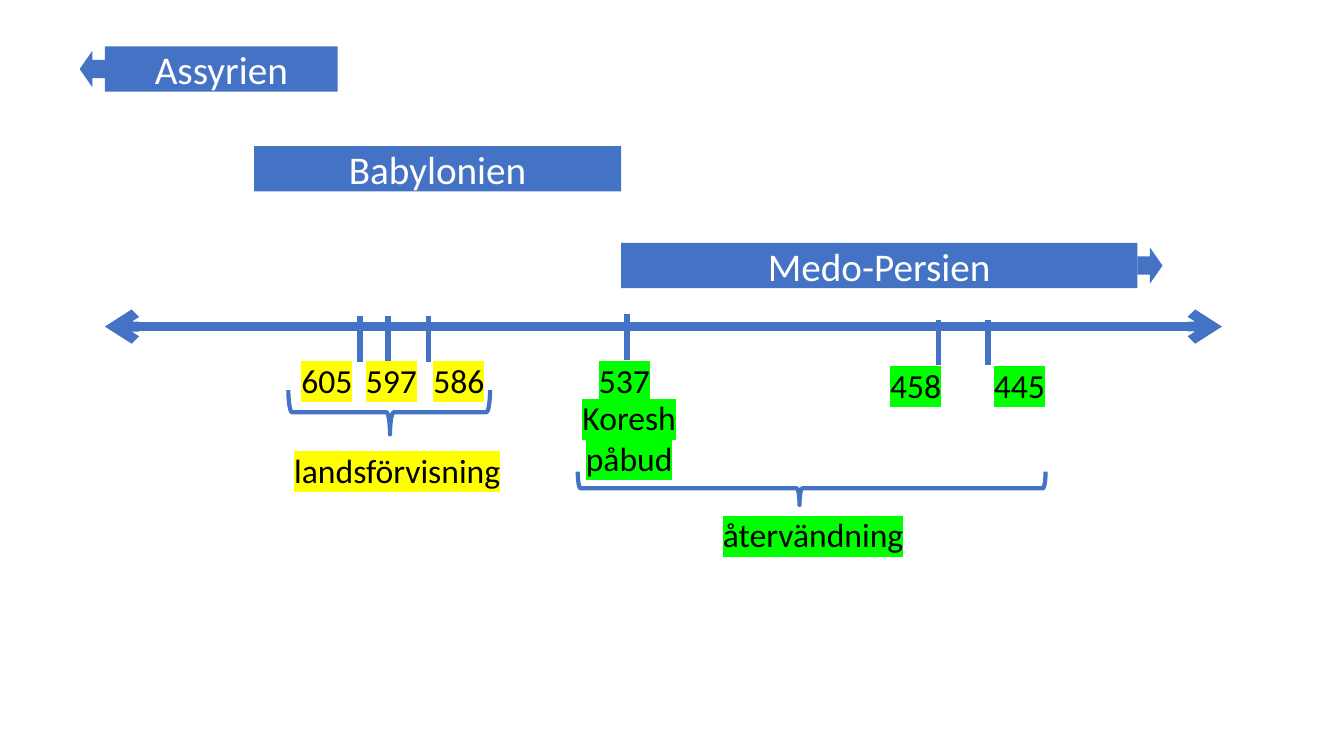
from lxml import etree
from pptx import Presentation
from pptx.dml.color import RGBColor
from pptx.enum.shapes import MSO_CONNECTOR, MSO_SHAPE
from pptx.enum.text import MSO_ANCHOR, MSO_AUTO_SIZE, PP_ALIGN
from pptx.oxml.ns import qn
from pptx.util import Inches, Pt

STRAIGHT = MSO_CONNECTOR.STRAIGHT
RECTANGLE = MSO_SHAPE.RECTANGLE
LEFT_ARROW = MSO_SHAPE.LEFT_ARROW
RIGHT_ARROW = MSO_SHAPE.RIGHT_ARROW
RIGHT_BRACE = MSO_SHAPE.RIGHT_BRACE
CENTER, LEFT = PP_ALIGN.CENTER, PP_ALIGN.LEFT
MIDDLE = MSO_ANCHOR.MIDDLE
GROW = MSO_AUTO_SIZE.SHAPE_TO_FIT_TEXT

FONT = "Calibri"
BLUE, WHITE, BLACK = "4472C4", "FFFFFF", "000000"
YELLOW, GREEN = "FFFF00", "00FF00"

EMPIRES = [
    ("Assyrien", 1.04, 0.46, 2.31, LEFT_ARROW),
    ("Babylonien", 2.52, 1.45, 3.64, None),
    ("Medo-Persien", 6.16, 2.41, 5.12, RIGHT_ARROW),
]
EMPIRE_HEIGHT = 0.45
ARROW_WIDTH, ARROW_HEIGHT = 0.25, 0.36

TIMELINE = (1.04, 12.12, 3.24)
TICK_HEIGHT = 0.45
YEAR_WIDTH, LINE_HEIGHT = 0.71, 0.5

PERIODS = [
    {
        "highlight": GREEN,
        "years": [("537", 6.22, 3.12, 5.84, 3.52),
                  ("458", 9.31, 3.17, 8.73, 3.57),
                  ("445", 9.8, 3.17, 9.76, 3.57)],
        "captions": [("Koresh påbud", 5.23, 3.89, 2.02, 0.91),
                     ("återvändning", 6.8, 5.05, 2.53, LINE_HEIGHT)],
        "brace": (5.73, 4.68, 4.64, 0.33, 0.526),
    },
    {
        "highlight": YELLOW,
        "years": [("605", 3.57, 3.14, 2.89, 3.52),
                  ("597", 3.85, 3.14, 3.53, 3.52),
                  ("586", 4.25, 3.14, 4.2, 3.52)],
        "captions": [("landsförvisning", 2.65, 4.41, 2.58, LINE_HEIGHT)],
        "brace": (2.86, 3.87, 2, 0.44, 0.496),
    },
]


def color(hex_string):
    return RGBColor.from_string(hex_string)


def write(frame, words, size, ink, align, highlight=None):
    paragraph = frame.paragraphs[0]
    paragraph.alignment = align
    run = paragraph.add_run()
    run.text = words
    run.font.size = Pt(size)
    run.font.color.rgb = color(ink)
    if highlight:
        marker = etree.Element(qn("a:highlight"))
        etree.SubElement(marker, qn("a:srgbClr"), val=highlight)
        run.font.fill._xPr.find(qn("a:solidFill")).addnext(marker)
    run.font.name = FONT


def add_label(shapes, words, box, align, wrap, highlight):
    label = shapes.add_textbox(*map(Inches, box))
    label.text_frame.word_wrap = wrap
    label.text_frame.auto_size = GROW
    write(label.text_frame, words, 24, BLACK, align, highlight)


def add_line(shapes, x1, y1, x2, y2, weight):
    line = shapes.add_connector(STRAIGHT, *map(Inches, (x1, y1, x2, y2)))
    line.line.color.rgb = color(BLUE)
    line.line.width = Pt(weight)
    etree.SubElement(line._element.spPr, qn("a:effectLst"))
    return line


def add_solid(shapes, kind, *box):
    solid = shapes.add_shape(kind, *map(Inches, box))
    solid.shadow.inherit = False
    solid.fill.solid()
    solid.fill.fore_color.rgb = color(BLUE)
    solid.line.fill.background()
    return solid


def add_brace(shapes, left, top, width, height, tip):
    unturned_left = left + (width - height) / 2
    unturned_top = top - (width - height) / 2
    brace = shapes.add_shape(
        RIGHT_BRACE, *map(Inches, (unturned_left, unturned_top, height, width)))
    brace.rotation = 90
    brace.adjustments[0] = 0.083
    brace.adjustments[1] = tip
    brace.shadow.inherit = False
    brace.fill.background()
    brace.line.color.rgb = color(BLUE)
    brace.line.width = Pt(3)


def add_empire(shapes, name, left, top, width, arrow):
    bar = add_solid(shapes, RECTANGLE, left, top, width, EMPIRE_HEIGHT)
    bar.text_frame.vertical_anchor = MIDDLE
    write(bar.text_frame, name, 28, WHITE, CENTER)
    if arrow:
        arrow_left = left - ARROW_WIDTH if arrow == LEFT_ARROW else left + width
        arrow_top = top + (EMPIRE_HEIGHT - ARROW_HEIGHT) / 2
        add_solid(shapes, arrow, arrow_left, arrow_top, ARROW_WIDTH, ARROW_HEIGHT)


def add_timeline(shapes, start, end, y):
    timeline = add_line(shapes, start, y, end, y, 7)
    outline = timeline.line._get_or_add_ln()
    for tip in ("a:headEnd", "a:tailEnd"):
        etree.SubElement(outline, qn(tip), type="arrow")


def add_period(shapes, period):
    highlight = period["highlight"]
    for year, tick_x, tick_top, left, top in period["years"]:
        add_line(shapes, tick_x, tick_top, tick_x, tick_top + TICK_HEIGHT, 4)
        add_label(shapes, year, (left, top, YEAR_WIDTH, LINE_HEIGHT),
                  LEFT, False, highlight)
    for words, *box in period["captions"]:
        add_label(shapes, words, box, CENTER, True, highlight)
    add_brace(shapes, *period["brace"])


def main():
    deck = Presentation()
    deck.slide_width, deck.slide_height = Inches(13.33), Inches(7.5)
    shapes = deck.slides.add_slide(deck.slide_layouts[6]).shapes
    for empire in EMPIRES:
        add_empire(shapes, *empire)
    add_timeline(shapes, *TIMELINE)
    for period in PERIODS:
        add_period(shapes.add_group_shape().shapes, period)
    deck.save("out.pptx")


if __name__ == "__main__":
    main()
